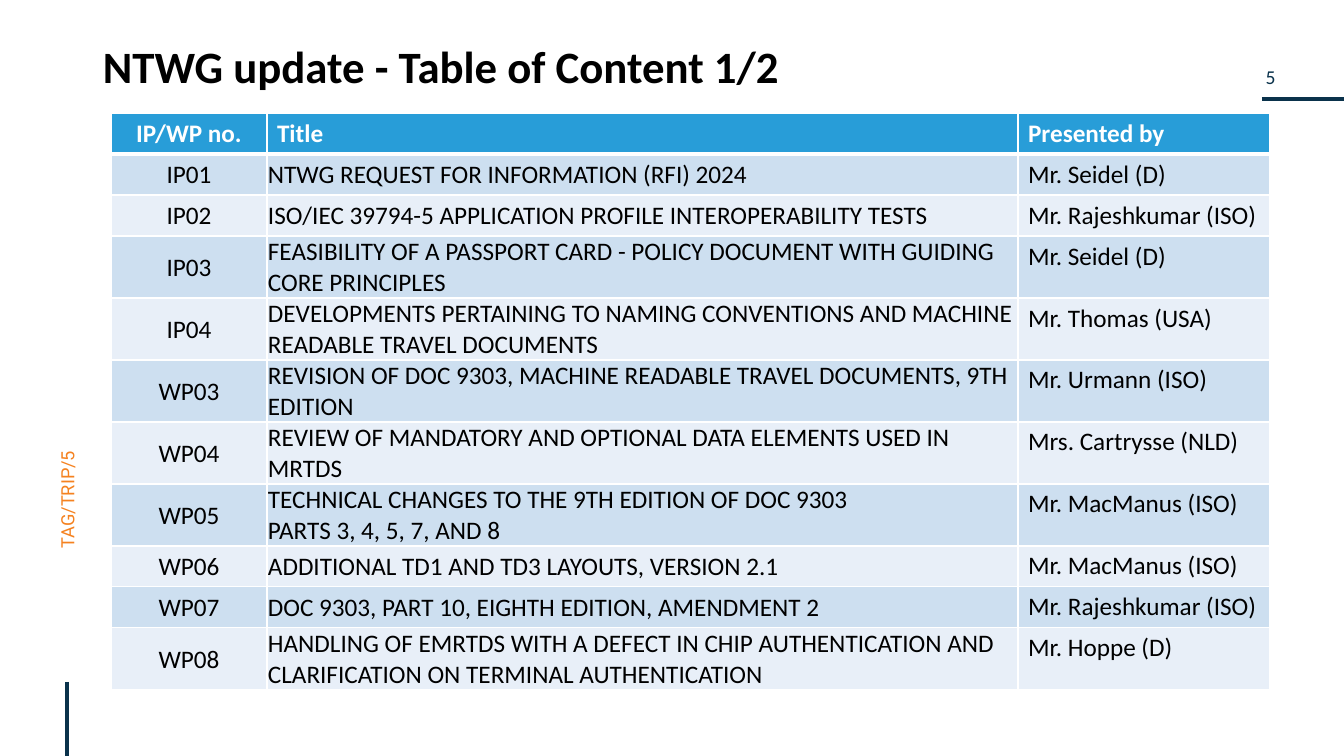
import pptx
import pptx.dml.color
import pptx.enum.shapes
import pptx.enum.text
import pptx.oxml
import pptx.oxml.ns
import pptx.util

ALIGN = pptx.enum.text.PP_ALIGN
ANCHOR = pptx.enum.text.MSO_ANCHOR
COLORS = {
    "ink": "000000",
    "white": "FFFFFF",
    "navy": "0A324B",
    "orange": "F58220",
    "header": "289DD8",
    "band_dark": "CDDFF0",
    "band_light": "E8EFF8",
}
COLUMN_WIDTHS = [156, 751, 252]
SINGLE_ROW, DOUBLE_ROW = 41, 62
HEADINGS = ("IP/WP no.", "Title", "Presented by")
PAPERS = [
    ("IP01", "NTWG REQUEST FOR INFORMATION (RFI) 2024", "Mr. Seidel (D)"),
    ("IP02", "ISO/IEC 39794-5 APPLICATION PROFILE INTEROPERABILITY TESTS", "Mr. Rajeshkumar (ISO)"),
    ("IP03", "FEASIBILITY OF A PASSPORT CARD - POLICY DOCUMENT WITH GUIDING CORE PRINCIPLES", "Mr. Seidel (D)"),
    ("IP04", "DEVELOPMENTS PERTAINING TO NAMING CONVENTIONS AND MACHINE READABLE TRAVEL DOCUMENTS", "Mr. Thomas (USA)"),
    ("WP03", "REVISION OF DOC 9303, MACHINE READABLE TRAVEL DOCUMENTS, 9TH EDITION", "Mr. Urmann (ISO)"),
    ("WP04", "REVIEW OF MANDATORY AND OPTIONAL DATA ELEMENTS USED IN MRTDS", "Mrs. Cartrysse (NLD)"),
    ("WP05", "TECHNICAL CHANGES TO THE 9TH EDITION OF DOC 9303\nPARTS 3, 4, 5, 7, AND 8", "Mr. MacManus (ISO)"),
    ("WP06", "ADDITIONAL TD1 AND TD3 LAYOUTS, VERSION 2.1", "Mr. MacManus (ISO)"),
    ("WP07", "DOC 9303, PART 10, EIGHTH EDITION, AMENDMENT 2", "Mr. Rajeshkumar (ISO)"),
    ("WP08", "HANDLING OF EMRTDS WITH A DEFECT IN CHIP AUTHENTICATION AND CLARIFICATION ON TERMINAL AUTHENTICATION", "Mr. Hoppe (D)"),
]
TWO_LINE_PAPERS = {"IP03", "IP04", "WP03", "WP04", "WP05", "WP08"}


def px(length):
    """Turn pixels into EMU."""
    return pptx.util.Emu(round(length * 914400 / 100.8))


def rgb(name):
    """Look up a named colour."""
    return pptx.dml.color.RGBColor.from_string(COLORS[name])


class SlideBuilder:
    """Hold the text style and the current slide."""

    def __init__(self, slide, font="Calibri"):
        """Keep the slide and its default font."""
        self.slide = slide
        self.font = font

    def add_words(self, frame, words, size, color, bold=False, align=ALIGN.LEFT, spacing=None, font=None):
        """Fill one paragraph, with a line break at each newline."""
        paragraph = frame.paragraphs[0]
        paragraph.alignment = align
        if spacing:
            paragraph.line_spacing = spacing
        for number, line in enumerate(words.split("\n")):
            if number:
                paragraph.add_line_break()
            run = paragraph.add_run()
            run.text = line
            run.font.name = font or self.font
            run.font.size = pptx.util.Pt(size)
            run.font.bold = bold
            run.font.color.rgb = rgb(color)

    def text(self, box, words, size, color, wrap=True, inset=None, anchor=ANCHOR.TOP, rotation=0, **style):
        """Add a text box."""
        label = self.slide.shapes.add_textbox(*map(px, box))
        label.rotation = rotation
        frame = label.text_frame
        frame.word_wrap = wrap
        frame.vertical_anchor = anchor
        if inset is not None:
            frame.margin_left = frame.margin_right = px(inset)
            frame.margin_top = frame.margin_bottom = px(inset)
        self.add_words(frame, words, size, color, **style)

    def rule(self, start, end, color, width):
        """Add a straight line without shadow."""
        straight = pptx.enum.shapes.MSO_CONNECTOR.STRAIGHT
        line = self.slide.shapes.add_connector(straight, *map(px, start + end))
        line.line.color.rgb = rgb(color)
        line.line.width = pptx.util.Pt(width)
        line._element.spPr.append(pptx.oxml.parse_xml(
            f'<a:effectLst {pptx.oxml.ns.nsdecls("a")}/>'))

    def borders(self, cell, color, **widths):
        """Draw the four borders of a cell."""
        properties = cell._tc.get_or_add_tcPr()
        for side in "LRTB":
            width = pptx.util.Pt(widths.get(side, 1))
            properties.append(pptx.oxml.parse_xml(
                f'<a:ln{side} {pptx.oxml.ns.nsdecls("a")} w="{width}"><a:solidFill>'
                f'<a:srgbClr val="{COLORS[color]}"/></a:solidFill></a:ln{side}>'))

    def table(self, left, top, widths, heights, headings, records):
        """Add a table with a header and alternating bands."""
        box = map(px, (left, top, sum(widths), sum(heights)))
        grid = self.slide.shapes.add_table(len(heights), len(widths), *box).table
        for column, width in zip(grid.columns, widths):
            column.width = px(width)
        for index, record in enumerate([headings] + records):
            grid.rows[index].height = px(heights[index])
            is_header = index == 0
            band = "header" if is_header else ("band_light", "band_dark")[index % 2]
            for position, words in enumerate(record):
                cell = grid.cell(index, position)
                edges = {"B": 3} if is_header else {"T": 3} if index == 1 else {}
                self.borders(cell, "white", **edges)
                cell.fill.solid()
                cell.fill.fore_color.rgb = rgb(band)
                if not is_header and position < 2:
                    cell.vertical_anchor = ANCHOR.MIDDLE
                    cell.margin_left = cell.margin_right = cell.margin_top = px(1)
                    cell.margin_bottom = px(0)
                self.add_words(cell.text_frame, words, 18, "white" if is_header else "ink",
                               bold=is_header, align=ALIGN.LEFT if position else ALIGN.CENTER)


def main():
    """Build and save the slide."""
    deck = pptx.Presentation()
    deck.slide_width, deck.slide_height = px(1344), px(756)
    page = SlideBuilder(deck.slides.add_slide(deck.slide_layouts[6]))
    page.rule((1262, 99), (1344, 99), "navy", 3)
    page.text((1210, 65, 121, 33), "5", 14, "navy", wrap=False, inset=0, align=ALIGN.CENTER)
    page.rule((67, 682), (67, 756), "navy", 3)
    page.text((-5, 473, 147, 24), "TAG/TRIP/5", 13, "orange", anchor=ANCHOR.MIDDLE,
              rotation=270, spacing=0.9, font="Roboto")
    page.text((93, 40, 1159, 73), "NTWG update - Table of Content 1/2", 32, "ink", bold=True, spacing=0.9)
    heights = [SINGLE_ROW] + [DOUBLE_ROW if paper[0] in TWO_LINE_PAPERS else SINGLE_ROW for paper in PAPERS]
    page.table(111, 113, COLUMN_WIDTHS, heights, HEADINGS, PAPERS)
    deck.save("out.pptx")


if __name__ == "__main__":
    main()
